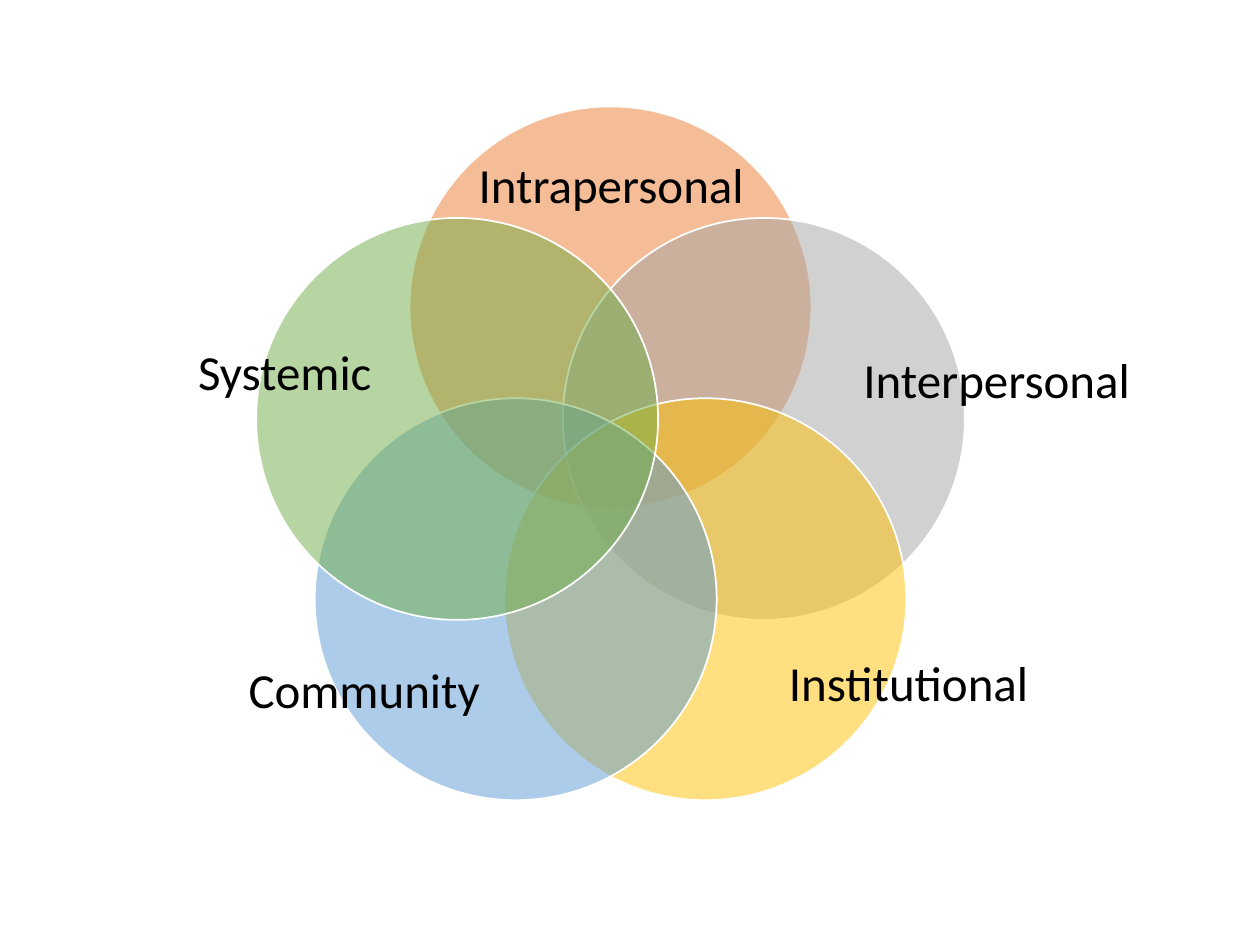
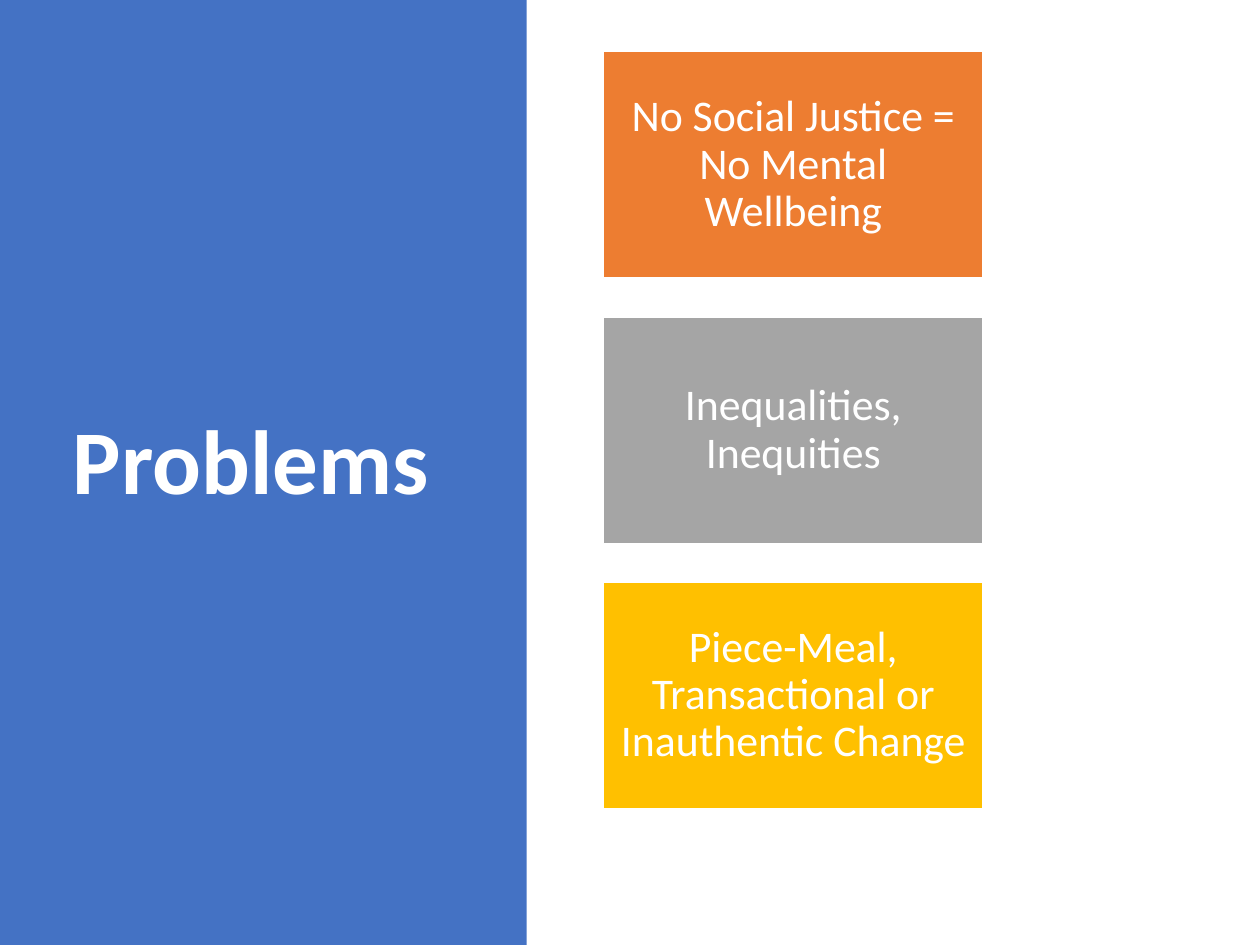
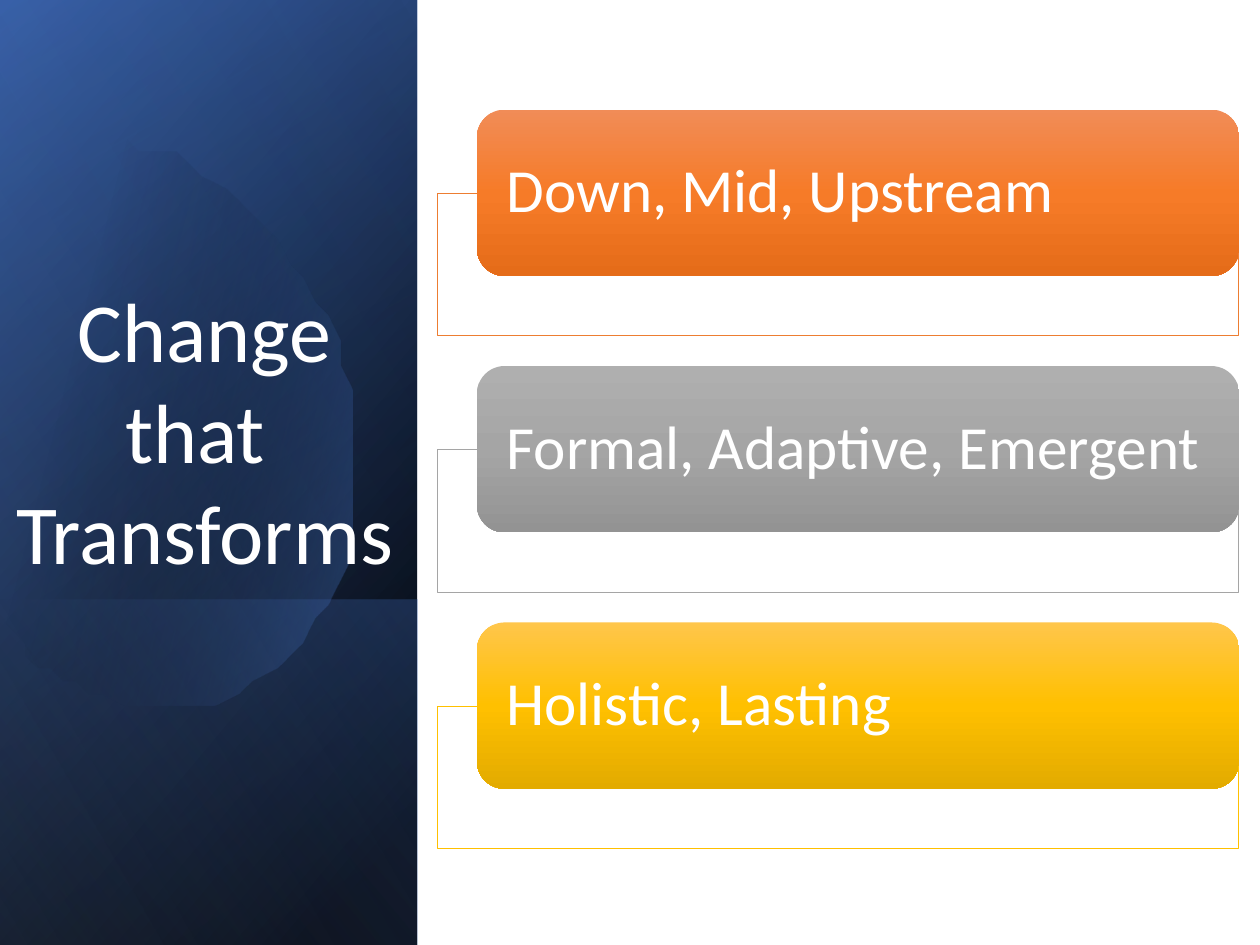
from dataclasses import dataclass
from math import cos, radians, sin

from pptx import Presentation
from pptx.dml.color import RGBColor
from pptx.enum.shapes import MSO_SHAPE
from pptx.enum.text import MSO_ANCHOR, PP_ALIGN
from pptx.oxml import parse_xml
from pptx.oxml.ns import nsdecls, qn
from pptx.util import Inches, Pt


@dataclass(frozen=True)
class Theme:
    font: str = "Calibri"
    white: str = "FFFFFF"
    black: str = "000000"
    blue: str = "4472C4"
    navy: str = "2F5597"
    pale: str = "8FAADC"
    orange: str = "ED7D31"
    gray: str = "A5A5A5"
    gold: str = "FFC000"
    sky: str = "5B9BD5"
    green: str = "70AD47"
    label: int = 28
    card: int = 25
    step: int = 35
    head: int = 52
    title: int = 48
    thin: float = 0.5
    rule: float = 1


@dataclass(frozen=True)
class Box:
    x: float
    y: float
    w: float
    h: float

    def inner(self, x, y, w, h):
        return Box(self.x + x, self.y + y, w, h)

    def place(self):
        return [cell(n) for n in (self.x, self.y, self.w, self.h)]


T = Theme()
COLS, ROWS, CELL = 100, 75, 0.1
PAGE = Box(0, 0, COLS, ROWS)


def cell(n):
    return Inches(n * CELL)


def tint(color, alpha):
    return f'<a:srgbClr val="{color}"><a:alpha val="{alpha * 1000}"/></a:srgbClr>'


def paint(shape, fill, alpha=100, angle=90):
    shape.fill.solid()
    old = shape._element.spPr.find(qn("a:solidFill"))
    if isinstance(fill, str):
        xml = f'<a:solidFill {nsdecls("a")}>{tint(fill, alpha)}</a:solidFill>'
    else:
        stops = "".join(
            f'<a:gs pos="{at * 1000}">{tint(color, clear)}</a:gs>'
            for at, color, clear in fill
        )
        xml = (
            f'<a:gradFill {nsdecls("a")} rotWithShape="1"><a:gsLst>{stops}</a:gsLst>'
            f'<a:lin ang="{angle * 60000}" scaled="0"/></a:gradFill>'
        )
    old.getparent().replace(old, parse_xml(xml))


def style(shape, fill, line=None, width=T.rule, **look):
    shape.shadow.inherit = False
    paint(shape, fill, **look)
    if line:
        shape.line.color.rgb = RGBColor.from_string(line)
        shape.line.width = Pt(width)
    else:
        shape.line.fill.background()
    return shape


def draw(slide, kind, box, fill, **look):
    return style(slide.shapes.add_shape(kind, *box.place()), fill, **look)


def write(shape, text, size, color=T.white, bold=False, align=PP_ALIGN.CENTER,
          anchor=MSO_ANCHOR.MIDDLE, pad=(1, 0.5), space=0.9):
    frame = shape.text_frame
    frame.word_wrap = True
    frame.vertical_anchor = anchor
    frame.margin_left = frame.margin_right = cell(pad[0])
    frame.margin_top = frame.margin_bottom = cell(pad[1])
    line = frame.paragraphs[0]
    line.text = text
    line.alignment = align
    line.line_spacing = space
    for run in line.runs:
        run.font.name = T.font
        run.font.size = Pt(size)
        run.font.bold = bold
        run.font.color.rgb = RGBColor.from_string(color)


def note(slide, box, text, size, **look):
    write(slide.shapes.add_textbox(*box.place()), text, size, **look)


def venn(slide, box):
    side, reach = 31.9, 12.8
    wide, tall = 33.2, 23.2
    rings = (
        ("Intrapersonal", T.orange, 48.5, 14.9),
        ("Interpersonal", T.gray, 79.1, 30.4),
        ("Institutional", T.gold, 72.1, 54.4),
        ("Community", T.sky, 28.9, 55),
        ("Systemic", T.green, 22.6, 29.7),
    )
    for i, (text, color, x, y) in enumerate(rings):
        turn = radians(i * 360 / len(rings))
        left = 48.45 + reach * sin(turn) - side / 2
        top = 37.2 - reach * cos(turn) - side / 2
        draw(slide, MSO_SHAPE.OVAL, box.inner(left, top, side, side), color,
             alpha=50, line=T.white)
        note(slide, box.inner(x - wide / 2, y - tall / 2, wide, tall), text,
             T.label, color=T.black, pad=(0, 0))


def panel(slide, box):
    draw(slide, MSO_SHAPE.RECTANGLE, box, T.blue)
    note(slide, box.inner(4.3, 6.8, 31.2, 60.2), "Problems", T.head, bold=True)


def cards(slide, box):
    items = (
        ("No Social Justice = No Mental Wellbeing", T.orange),
        ("Inequalities, Inequities", T.gray),
        ("Piece-Meal, Transactional or Inauthentic Change", T.gold),
    )
    for i, (text, color) in enumerate(items):
        card = draw(slide, MSO_SHAPE.RECTANGLE, box.inner(0, i * 21.05, box.w, 18),
                    color, line=T.white)
        write(card, text, T.card, pad=(1, 1))


def band(slide, box, stops, angle):
    gap = (box.h - box.w) / 2
    turned = Box(box.x - gap, box.y + gap, box.h, box.w)
    shape = draw(slide, MSO_SHAPE.RECTANGLE, turned, stops, angle=angle)
    shape.rotation = 90
    shape._element.spPr.xfrm.set("flipH", "1")


def curve(a, b, c, d, count=16):
    for i in range(1, count + 1):
        t = i / count
        s = 1 - t
        yield tuple(
            s**3 * p + 3 * s * s * t * q + 3 * s * t * t * r + t**3 * v
            for p, q, r, v in zip(a, b, c, d)
        )


def leaf(slide, box):
    start = (9.6, 11.4)
    arcs = (
        ((17.1, 12.2), (24.4, 19.2), (27.3, 29)),
        ((30.7, 41.2), (26.2, 53.1), (17.1, 55.7)),
        ((11.4, 57.4), (5.3, 55), (0.7, 50)),
        ((-0.3, 48.8),),
        ((-2.5, 16.6),),
        ((-1.5, 15.4),),
        ((0.2, 13.7), (2.2, 12.5), (4.5, 11.8)),
        ((6.2, 11.3), (7.9, 11.2), start),
    )
    dots, last = [], start
    for arc in arcs:
        dots += curve(last, *arc) if len(arc) == 3 else arc
        last = arc[-1]
    pen = slide.shapes.build_freeform(
        box.x + start[0], box.y + start[1], scale=cell(1))
    pen.add_line_segments([(box.x + x, box.y + y) for x, y in dots], close=True)
    style(pen.convert_to_shape(), ((29, T.black, 0), (100, T.blue, 43)), angle=14)


def cover(slide, box):
    low = 27.4
    band(slide, box, ((8, T.black, 100), (100, T.navy, 100)), 50)
    band(slide, box, ((0, T.black, 0), (99, T.blue, 46)), 30)
    band(slide, box.inner(0, box.h - low, box.w, low),
         ((2, T.blue, 29), (100, T.black, 30)), 130)
    leaf(slide, box)
    band(slide, box, ((0, T.black, 0), (99, T.pale, 11)), 120)
    note(slide, box.inner(-1.7, 20.4, 35.9, 26.2), "Change\nthat \nTransforms",
         T.title, anchor=MSO_ANCHOR.BOTTOM, space=1)


def steps(slide, box):
    items = (
        ("Down, Mid, Upstream", T.orange, ("F18C57", "F67B28", "E56C19")),
        ("Formal, Adaptive, Emergent", T.gray, ("AFAFAF", T.gray, "939393")),
        ("Holistic, Lasting", T.gold, ("FFC64B", T.gold, "E3AB00")),
    )
    for i, (text, color, shades) in enumerate(items):
        top = i * 20.35
        draw(slide, MSO_SHAPE.RECTANGLE, box.inner(0, top + 6.65, box.w, 11.3),
             T.white, alpha=90, line=color, width=T.thin)
        stops = [(n * 50, shade, 100) for n, shade in enumerate(shades)]
        card = draw(slide, MSO_SHAPE.ROUNDED_RECTANGLE,
                    box.inner(3.15, top, 60.5, 13.2), stops)
        write(card, text, T.step, align=PP_ALIGN.LEFT, pad=(1.7, 0))


def main():
    deck = Presentation()
    deck.slide_width, deck.slide_height = cell(COLS), cell(ROWS)
    pages = (
        ((venn, PAGE),),
        ((panel, PAGE.inner(0, 0, 41.8, ROWS)),
         (cards, PAGE.inner(47.9, 4.1, 30.1, 60.1))),
        ((cover, PAGE.inner(0, 0, 33.1, ROWS)),
         (steps, PAGE.inner(34.7, 8.7, 63.6, 58.6))),
    )
    for regions in pages:
        slide = deck.slides.add_slide(deck.slide_layouts[6])
        for build, box in regions:
            build(slide, box)
    deck.save("out.pptx")


if __name__ == "__main__":
    main()
